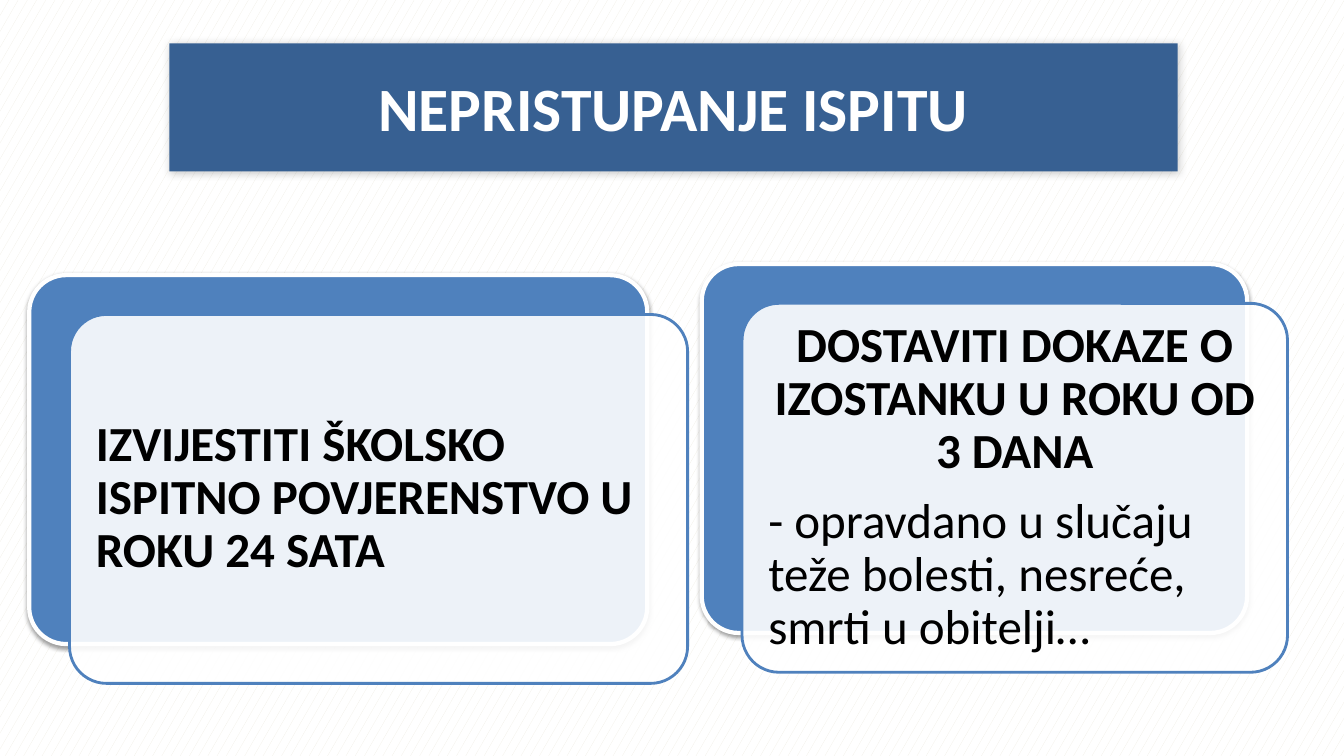
from lxml import etree
from pptx import Presentation, util as u
from pptx.dml.color import RGBColor
from pptx.enum import dml, shapes, text
from pptx.oxml.ns import qn

WIDE, HIGH = 13.33, 7.5
BLUE, WHITE, BLACK = "4F81BD", "FFFFFF", "000000"
LEFT, MID = text.PP_ALIGN.LEFT, text.PP_ALIGN.CENTER


def color(code):
    return RGBColor.from_string(code)


def assign(item, **values):
    for name, value in values.items():
        setattr(item, name, value)


def inches(box):
    return [u.Inches(size) for size in box]


def shade(shape, alpha, blur, dist, angle):
    effects = shape._element.spPr.find(qn("a:effectLst"))
    outer = etree.SubElement(
        effects, qn("a:outerShdw"), blurRad=str(u.Pt(blur)),
        dist=str(u.Pt(dist)), dir=str(angle * 60000), algn="ctr", rotWithShape="0")
    tint = etree.SubElement(outer, qn("a:srgbClr"), val=BLACK)
    etree.SubElement(tint, qn("a:alpha"), val=str(alpha * 1000))


def panel(slide, kind, box, fill, line=None, width=0, alpha=None, shadow=None):
    shape = slide.shapes.add_shape(kind, *inches(box))
    shape.fill.solid()
    shape.fill.fore_color.rgb = color(fill)
    if alpha:
        tint = shape._element.spPr.find(qn("a:solidFill"))[0]
        etree.SubElement(tint, qn("a:alpha"), val=str(alpha * 1000))
    if line:
        shape.line.color.rgb = color(line)
        shape.line.width = u.Pt(width)
    else:
        shape.line.fill.background()
    shape.shadow.inherit = False
    if shadow:
        shade(shape, *shadow)
    return shape


def write(shape, lines, size, tint, **form):
    frame = shape.text_frame
    assign(frame, word_wrap=True, vertical_anchor=text.MSO_ANCHOR.MIDDLE)
    for index, (words, bold, align) in enumerate(lines):
        para = frame.paragraphs[0] if index == 0 else frame.add_paragraph()
        assign(para, alignment=align, **form)
        run = para.add_run()
        run.text = words
        assign(run.font, name="Calibri", size=u.Pt(size), bold=bold)
        run.font.color.rgb = color(tint)


def banner(slide, box, words):
    shape = panel(slide, shapes.MSO_SHAPE.RECTANGLE, box, "376092", shadow=(20, 6, 1, 45))
    write(shape, [(words, True, MID)], 44, WHITE)


def card(slide, box, lines):
    left, top, width, height = box
    shift, inset = (0.4, 0.39), 0.11
    front = (left + shift[0], top + shift[1], width, height)
    round_kind = shapes.MSO_SHAPE.ROUNDED_RECTANGLE
    pair = (
        panel(slide, round_kind, box, BLUE, WHITE, 3, shadow=(38, 3.1, 1.6, 90)),
        panel(slide, round_kind, front, WHITE, BLUE, 2, alpha=90),
    )
    for shape in pair:
        shape.adjustments[0] = 0.1
    inner = (front[0] + inset, front[1] + inset, width - 2 * inset, height - 2 * inset)
    label = slide.shapes.add_textbox(*inches(inner))
    for side in ("left", "right", "top", "bottom"):
        setattr(label.text_frame, "margin_" + side, u.Inches(0.15))
    write(label, lines, 35, BLACK, line_spacing=0.9, space_after=u.Pt(12.5))


def main():
    deck = Presentation()
    assign(deck, slide_width=u.Inches(WIDE), slide_height=u.Inches(HIGH))
    slide = deck.slides.add_slide(deck.slide_layouts[6])
    back = slide.background.fill
    back.patterned()
    back.pattern = dml.MSO_PATTERN.SMALL_CONFETTI
    back.fore_color.rgb = color("EEECE1")
    back.back_color.rgb = color(WHITE)

    banner(slide, (1.68, 0.43, 10, 1.27), "NEPRISTUPANJE ISPITU")
    card(slide, (0.29, 2.73, 6.13, 3.66), [
        ("IZVIJESTITI ŠKOLSKO ISPITNO POVJERENSTVO U ROKU 24 SATA", True, LEFT),
    ])
    card(slide, (6.96, 2.62, 5.41, 3.66), [
        ("DOSTAVITI DOKAZE O IZOSTANKU U ROKU OD 3 DANA", True, MID),
        ("- opravdano u slučaju teže bolesti, nesreće, smrti u obitelji…", False, LEFT),
    ])
    deck.save("out.pptx")


if __name__ == "__main__":
    main()
